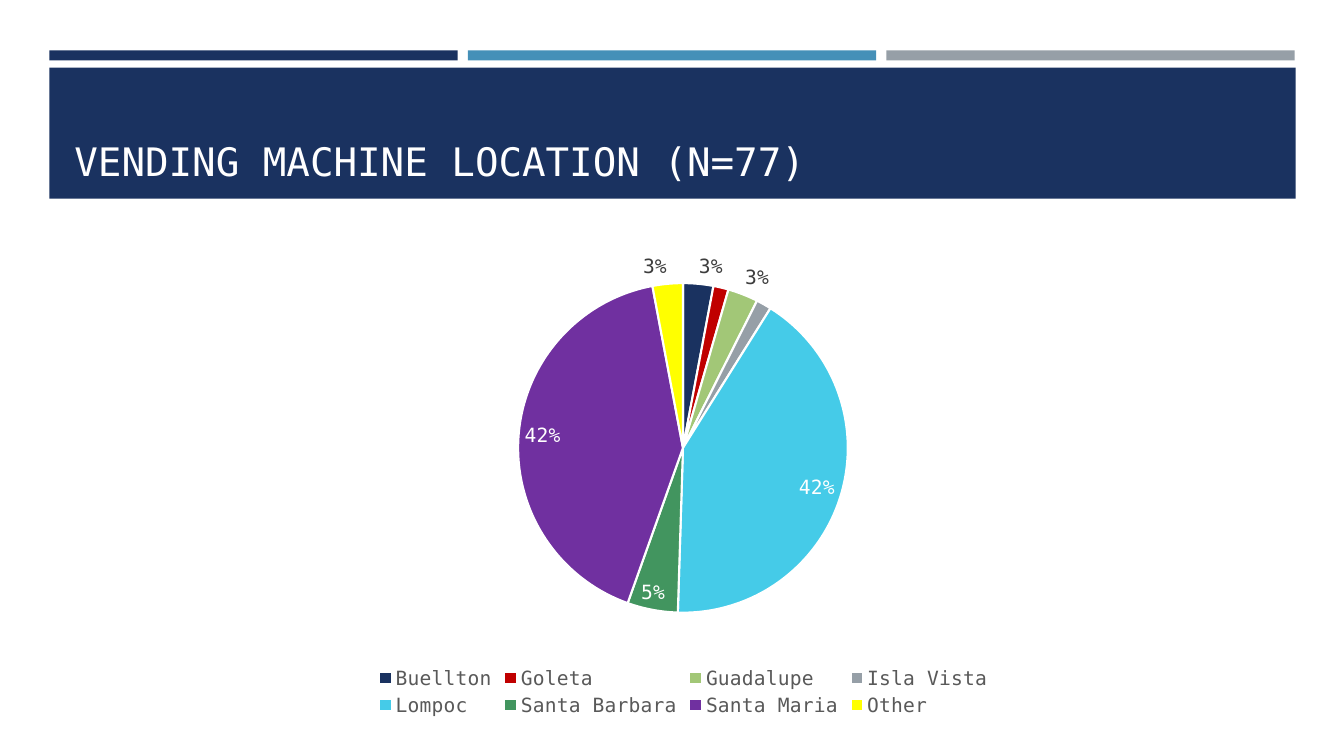
"""Build the vending machine location slide."""
from lxml import etree
from pptx import Presentation
from pptx.chart.data import CategoryChartData
from pptx.dml.color import RGBColor
from pptx.enum.chart import XL_CHART_TYPE, XL_LABEL_POSITION, XL_LEGEND_POSITION
from pptx.enum.shapes import MSO_SHAPE
from pptx.enum.text import MSO_ANCHOR
from pptx.oxml import parse_xml
from pptx.oxml.ns import nsdecls, qn
from pptx.util import Inches, Pt

PIE = XL_CHART_TYPE.PIE
INSIDE = XL_LABEL_POSITION.INSIDE_END
OUTSIDE = XL_LABEL_POSITION.OUTSIDE_END
LEGEND_BOTTOM = XL_LEGEND_POSITION.BOTTOM
RECTANGLE = MSO_SHAPE.RECTANGLE
ANCHOR_BOTTOM = MSO_ANCHOR.BOTTOM

COLORS = {
    "navy": "1A3260", "blue": "4590B8", "gray": "969FA7", "white": "FFFFFF",
    "red": "C00000", "lime": "A2C777", "cyan": "45CBE8", "green": "42955F",
    "purple": "7030A0", "yellow": "FFFF00", "label": "3D3D3D", "legend": "595959",
}
LOCATIONS = [
    ("Buellton", 3, "navy", "outside"),
    ("Goleta", 1.5, "red", "hidden"),
    ("Guadalupe", 3, "lime", "outside"),
    ("Isla Vista", 1.5, "gray", "hidden"),
    ("Lompoc", 42, "cyan", "inside"),
    ("Santa Barbara", 5, "green", "inside"),
    ("Santa Maria", 42, "purple", "inside"),
    ("Other", 3, "yellow", "outside"),
]
LABEL_SHIFTS = {"Lompoc": (0, 0.01), "Santa Barbara": (-0.01, 0)}
PLOT_LAYOUT = {"x": 0.366, "y": 0.088, "w": 0.267, "h": 0.687}


class SlideBuilder:
    """Hold the style and the current slide."""

    font_name = "DejaVu Sans Mono"

    def __init__(self, slide):
        self.slide = slide

    def color(self, name):
        return RGBColor.from_string(COLORS[name])

    def style(self, font, size, color):
        font.name = self.font_name
        font.size = Pt(size)
        font.color.rgb = self.color(color)

    def bar(self, left, top, width, height, color):
        band = self.slide.shapes.add_shape(
            RECTANGLE, Inches(left), Inches(top), Inches(width), Inches(height))
        band.shadow.inherit = False
        band.fill.solid()
        band.fill.fore_color.rgb = self.color(color)
        band.line.fill.background()

    def title(self, text, left, top, width, height):
        frame = self.slide.shapes.add_textbox(
            Inches(left), Inches(top), Inches(width), Inches(height)).text_frame
        frame.word_wrap = True
        frame.vertical_anchor = ANCHOR_BOTTOM
        heading = frame.paragraphs[0]
        heading.text = text
        self.style(heading.font, 28, "white")

    def pie(self, locations, left, top, width, height):
        data = CategoryChartData()
        data.categories = [location[0] for location in locations]
        data.add_series("Series 1", [location[1] for location in locations])
        chart = self.slide.shapes.add_chart(
            PIE, Inches(left), Inches(top), Inches(width), Inches(height), data).chart
        chart.has_title = False
        chart.has_legend = True
        chart.legend.position = LEGEND_BOTTOM
        chart.legend.include_in_layout = False
        self.style(chart.legend.font, 14, "legend")
        plot = chart.plots[0]
        plot.vary_by_categories = True
        series = plot.series[0]
        labels = series.data_labels
        labels.show_value = False
        labels.show_percentage = True
        labels.number_format = "0%"
        labels.number_format_is_linked = False
        labels.position = OUTSIDE
        self.style(labels.font, 14, "label")
        for index, (_, _, color, placement) in enumerate(locations):
            self.slice(series.points[index], color, placement)
        self.percent_labels(series, locations)
        self.plot_layout(chart)

    def slice(self, point, color, placement):
        point.format.fill.solid()
        point.format.fill.fore_color.rgb = self.color(color)
        point.format.line.color.rgb = self.color("white")
        point.format.line.width = Pt(1.5)
        inside = placement == "inside"
        self.style(point.data_label.font, 14, "white" if inside else "label")
        point.data_label.position = INSIDE if inside else OUTSIDE

    def percent_labels(self, series, locations):
        for label in series._element.iter(qn("c:dLbl")):
            index = label.find(qn("c:idx"))
            name, _, _, placement = locations[int(index.get("val"))]
            label.find(qn("c:showVal")).set("val", "0")
            label.find(qn("c:showPercent")).set(
                "val", "0" if placement == "hidden" else "1")
            index.addnext(parse_xml(
                f'<c:numFmt {nsdecls("c")} formatCode="0%" sourceLinked="0"/>'))
            if name in LABEL_SHIFTS:
                x, y = LABEL_SHIFTS[name]
                index.addnext(self.manual_layout({"x": x, "y": y}))

    def manual_layout(self, settings):
        layout = etree.Element(qn("c:layout"))
        manual = etree.SubElement(layout, qn("c:manualLayout"))
        for tag, value in settings.items():
            etree.SubElement(manual, qn(f"c:{tag}")).set("val", str(value))
        return layout

    def plot_layout(self, chart):
        area = chart._chartSpace.find(".//" + qn("c:plotArea"))
        for automatic in area.findall(qn("c:layout")):
            area.remove(automatic)
        area.insert(0, self.manual_layout(
            {"layoutTarget": "inner", "xMode": "edge", "yMode": "edge", **PLOT_LAYOUT}))


def main():
    presentation = Presentation()
    presentation.slide_width = Inches(13.33)
    presentation.slide_height = Inches(7.5)
    builder = SlideBuilder(presentation.slides.add_slide(presentation.slide_layouts[6]))
    for column, color in enumerate(("navy", "blue", "gray")):
        builder.bar(0.49 + 4.15 * column, 0.5, 4.05, 0.1, color)
    builder.bar(0.49, 0.67, 12.36, 1.3, "navy")
    builder.title("VENDING MACHINE LOCATION (N=77)", 0.64, 0.77, 12.06, 1.11)
    builder.pie(LOCATIONS, 0.64, 2.39, 12.28, 4.76)
    presentation.save("out.pptx")


if __name__ == "__main__":
    main()
